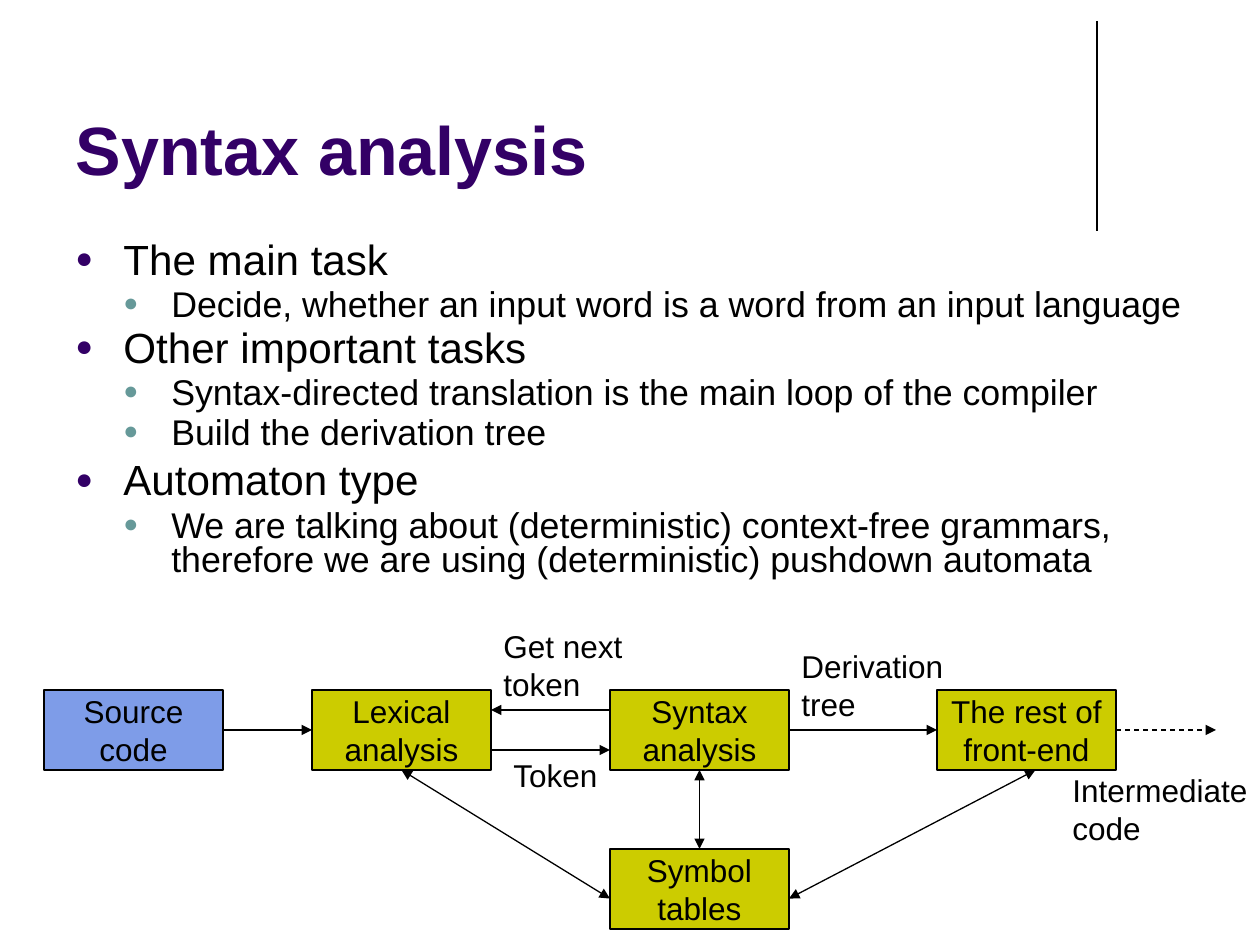
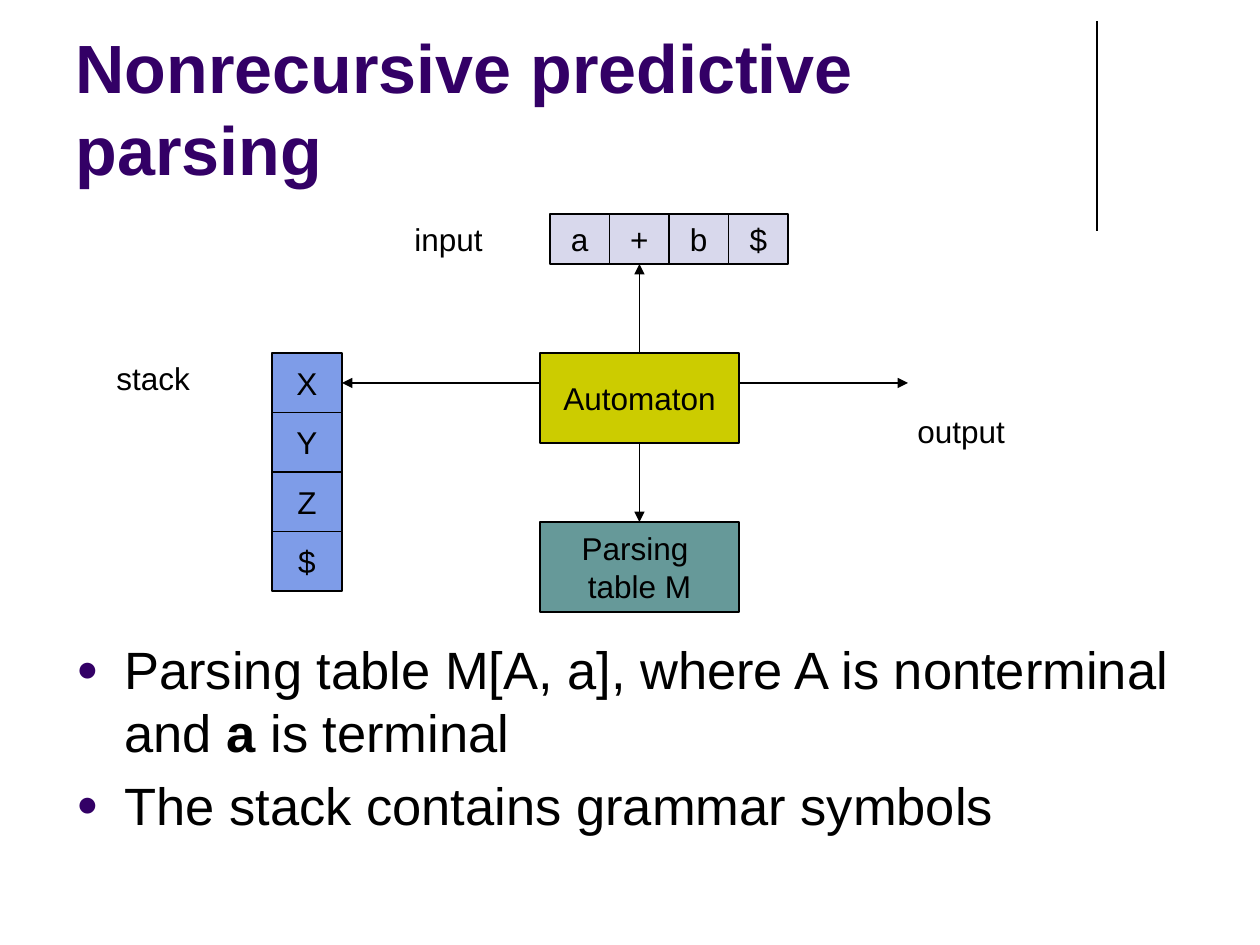
from lxml import etree
from pptx import Presentation
from pptx.dml.color import RGBColor
from pptx.enum.dml import MSO_LINE_DASH_STYLE as Dash
from pptx.enum.shapes import MSO_CONNECTOR as Link, MSO_SHAPE as Kind
from pptx.enum.text import MSO_ANCHOR as Anchor, MSO_AUTO_SIZE as Fit, PP_ALIGN as Align
from pptx.oxml.ns import qn
from pptx.util import Pt

# Shared look
PX = 914400 / 126
BLACK = RGBColor(0x00, 0x00, 0x00)
PURPLE = RGBColor(0x33, 0x00, 0x66)
TEAL = RGBColor(0x66, 0x99, 0x99)
OLIVE = RGBColor(0xCC, 0xCC, 0x00)
BLUE = RGBColor(0x7E, 0x9C, 0xE8)
LILAC = RGBColor(0xD8, 0xD8, 0xEC)

LABEL = {"name": "Arial", "size": Pt(18), "bold": False}
TITLE = {"name": "Arial", "size": Pt(39), "bold": True}
TITLE_BOX = (63, 16, 1040, 179)
RULE = ((1097, 21), (1097, 231))
STEP = 48  # indent per bullet level

# Slide 1: bullets are (level, line spacing, pieces); every second piece is bold
TASKS = [
    (0, 0.8, ["The main task"]),
    (1, 0.8, ["Decide, whether an input word is a word from an input language"]),
    (0, 0.8, ["Other important tasks"]),
    (1, 0.8, ["Syntax-directed translation is the main loop of the compiler"]),
    (1, 0.8, ["Build the derivation tree"]),
    (0, 0.9, ["Automaton type"]),
    (1, 0.8, ["We are talking about (deterministic) context-free grammars, "
              "therefore we are using (deterministic) pushdown automata"]),
]
TASK_BOX = (63, 237, 1134, 406)
TASK_SIZES = [(24.1, 4), (20.4, 3.5)]  # size and space before, by level

# Boxes are name: (text, fill, area)
STAGES = {
    "lex": ("Lexical\nanalysis", OLIVE, (312, 690, 179, 80)),
    "syn": ("Syntax\nanalysis", OLIVE, (610, 690, 179, 80)),
    "src": ("Source\ncode", BLUE, (44, 690, 179, 80)),
    "sym": ("Symbol\ntables", OLIVE, (610, 849, 179, 80)),
    "rest": ("The rest of\nfront-end", OLIVE, (937, 690, 179, 80)),
}
# Arrow ends are (box, share of width, share of height) or a plain point
FLOWS = [
    (("src", 1, 0.5), ("lex", 0, 0.5), {}),
    (("lex", 1, 0.75), ("syn", 0, 0.75), {}),
    (("syn", 0, 0.25), ("lex", 1, 0.25), {}),
    (("lex", 0.5, 1), ("sym", 0, 0.62), {"both": True}),
    (("rest", 0.55, 1), ("sym", 1, 0.62), {"both": True}),
    (("rest", 1, 0.5), (1216, 730), {"dash": True}),
    (("syn", 1, 0.5), ("rest", 0, 0.5), {}),
    (("syn", 0.5, 1), ("sym", 0.5, 0), {"both": True}),
]
NOTES = [
    ("Get next\ntoken", (491, 621, 159, 89)),
    ("Token", (501, 750, 111, 50)),
    ("Intermediate\ncode", (1060, 765, 200, 89)),
    ("Derivation\ntree", (789, 641, 169, 89)),
]

# Slide 2
FACTS = [
    (0, 1, ["Parsing table M[A, a], where A is nonterminal and ", "a ", "is terminal"]),
    (0, 1, ["The stack contains grammar symbols"]),
]
FACT_BOX = (64, 631, 1134, 228)
FACT_SIZES = [(30, 5.5)]
PARTS = {
    "auto": ("Automaton", OLIVE, (540, 353, 199, 90)),
    "table": ("Parsing \ntable M", TEAL, (540, 522, 199, 90)),
}
# Strips are (symbols, fill, whole area, runs across)
STRIPS = [
    ("a+b$", LILAC, (550, 214, 238, 50), True),
    ("XYZ$", BLUE, (272, 353, 70, 238), False),
]
MOVES = [
    (("auto", 0.5, 1), ("table", 0.5, 0), {}),
    (("auto", 0.5, 0), (639.5, 264), {}),
    (("auto", 0, 1 / 3), (342, 383), {}),
    (("auto", 1, 1 / 3), (908, 383), {}),
]
NAMES = [
    ("output", (905, 406, 113, 50)),
    ("input", (402, 214, 94, 50)),
    ("stack", (104, 353, 100, 50)),
]


def emu(*vals):
    return [round(v * PX) for v in vals]


def put(obj, vals):
    for key, val in vals.items():
        setattr(obj, key, val)


def style(par, look, color=BLACK):
    for run in par.runs:
        put(run.font, look)
        run.font.color.rgb = color


def ink(line):
    line.color.rgb = BLACK
    line.width = Pt(0.75)


# Drawing parts
def draw_box(slide, text, fill, area):
    box = slide.shapes.add_shape(Kind.RECTANGLE, *emu(*area))
    box.shadow.inherit = False
    box.fill.solid()
    box.fill.fore_color.rgb = fill
    ink(box.line)
    put(box.text_frame, {"word_wrap": False, "vertical_anchor": Anchor.MIDDLE})
    par = box.text_frame.paragraphs[0]
    put(par, {"text": text, "alignment": Align.CENTER})
    style(par, LABEL)


def draw_strip(slide, marks, fill, area, across):
    x, y, w, h = area
    dx, dy = (w / len(marks), 0) if across else (0, h / len(marks))
    for i, mark in enumerate(marks):
        draw_box(slide, mark, fill, (x + i * dx, y + i * dy, dx or w, dy or h))


def draw_note(slide, text, area):
    frame = slide.shapes.add_textbox(*emu(*area)).text_frame
    put(frame, {"word_wrap": False, "auto_size": Fit.SHAPE_TO_FIT_TEXT})
    par = frame.paragraphs[0]
    par.text = text
    style(par, LABEL)


def draw_line(slide, start, end, heads=(), dash=False):
    wire = slide.shapes.add_connector(Link.STRAIGHT, *emu(*start, *end))
    ink(wire.line)
    if dash:
        wire.line.dash_style = Dash.DASH
    pen = wire.line._get_or_add_ln()
    for head in heads:
        etree.SubElement(pen, qn("a:" + head), type="triangle")
    etree.SubElement(wire._element.spPr, qn("a:effectLst"))


def spot(end, boxes):
    if end[0] not in boxes:
        return end
    name, fx, fy = end
    x, y, w, h = boxes[name][2]
    return x + fx * w, y + fy * h


def draw_chart(slide, boxes, links, notes):
    for box in boxes.values():
        draw_box(slide, *box)
    for start, end, opts in links:
        heads = ("headEnd", "tailEnd") if opts.get("both") else ("tailEnd",)
        draw_line(slide, spot(start, boxes), spot(end, boxes), heads, opts.get("dash"))
    for note in notes:
        draw_note(slide, *note)


def add_dot(par, level):
    props = par._p.get_or_add_pPr()
    props.set("marL", str(emu(STEP * (level + 1))[0]))
    props.set("indent", str(emu(-STEP)[0]))
    tint = etree.SubElement(props, qn("a:buClr"))
    etree.SubElement(tint, qn("a:srgbClr"), val=str((PURPLE, TEAL)[level]))
    etree.SubElement(props, qn("a:buSzPct"), val="70000")
    etree.SubElement(props, qn("a:buFont"), typeface="Arial")
    etree.SubElement(props, qn("a:buChar"), char="●")


def draw_list(slide, items, area, sizes):
    frame = slide.shapes.add_textbox(*emu(*area)).text_frame
    frame.word_wrap = True
    for i, (level, gap, pieces) in enumerate(items):
        par = frame.add_paragraph() if i else frame.paragraphs[0]
        size, before = sizes[level]
        add_dot(par, level)
        put(par, {"level": level, "line_spacing": float(gap),
                  "space_before": Pt(before if i else 0)})
        for piece in pieces:
            par.add_run().text = piece
        style(par, {"name": "Arial", "size": Pt(size)})
        for run in par.runs[1::2]:
            run.font.bold = True


def new_slide(deck, text):
    slide = deck.slides.add_slide(deck.slide_layouts[5])
    title = slide.shapes.title
    put(title, dict(zip(("left", "top", "width", "height"), emu(*TITLE_BOX))))
    put(title.text_frame, {"vertical_anchor": Anchor.BOTTOM, "word_wrap": True,
                           "auto_size": Fit.NONE})
    par = title.text_frame.paragraphs[0]
    put(par, {"text": text, "alignment": Align.LEFT})
    style(par, TITLE, PURPLE)
    draw_line(slide, *RULE)
    return slide


def main():
    deck = Presentation()
    put(deck, dict(zip(("slide_width", "slide_height"), emu(1260, 945))))

    slide = new_slide(deck, "Syntax analysis")
    draw_list(slide, TASKS, TASK_BOX, TASK_SIZES)
    draw_chart(slide, STAGES, FLOWS, NOTES)

    slide = new_slide(deck, "Nonrecursive predictive parsing")
    draw_list(slide, FACTS, FACT_BOX, FACT_SIZES)
    for strip in STRIPS:
        draw_strip(slide, *strip)
    draw_chart(slide, PARTS, MOVES, NAMES)

    deck.save("out.pptx")


if __name__ == "__main__":
    main()
